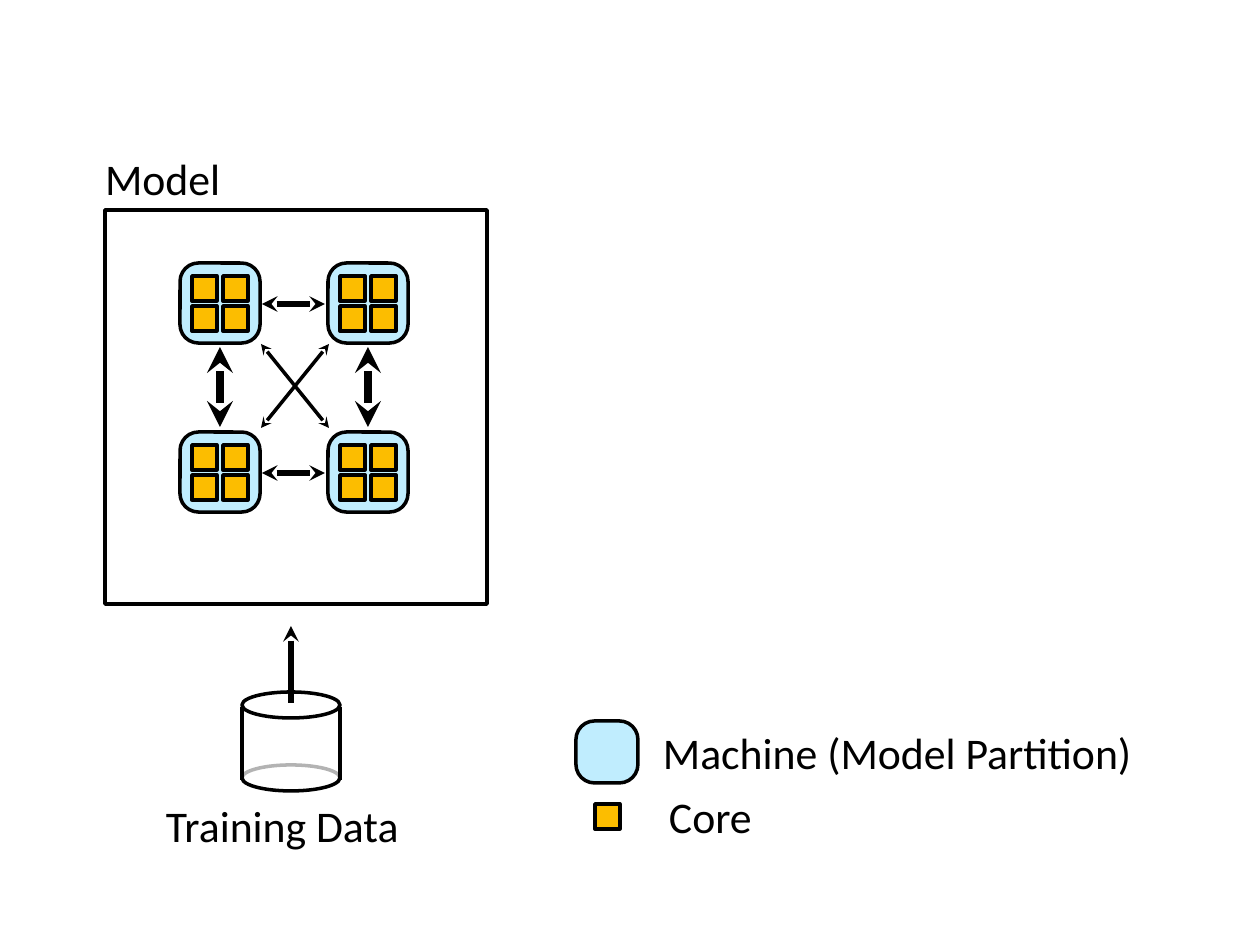
from lxml import etree
from pptx import Presentation
from pptx.dml.color import RGBColor
from pptx.enum.shapes import MSO_CONNECTOR, MSO_SHAPE
from pptx.enum.text import MSO_ANCHOR
from pptx.oxml.ns import qn
from pptx.util import Pt

RECT = MSO_SHAPE.RECTANGLE
ROUND = MSO_SHAPE.ROUNDED_RECTANGLE
OVAL = MSO_SHAPE.OVAL
LINE = MSO_CONNECTOR.STRAIGHT
MIDDLE = MSO_ANCHOR.MIDDLE

SCALE = 914400 / 126  # EMU per px


def px(n):
    return round(n * SCALE)


def color(code):
    return RGBColor.from_string(code)


class Board:
    font, size = "Calibri", 25
    ink, paper, blue, gold = "000000", "FFFFFF", "C0EDFE", "FCBD00"

    def __init__(self, slide):
        self.slide = slide

    def shape(self, kind, x, y, w, h, fill=None, line=2):
        item = self.slide.shapes.add_shape(kind, px(x), px(y), px(w), px(h))
        item.shadow.inherit = False
        if fill:
            item.fill.solid()
            item.fill.fore_color.rgb = color(fill)
        else:
            item.fill.background()
        if line:
            item.line.color.rgb = color(self.ink)
            item.line.width = Pt(line)
        else:
            item.line.fill.background()
        return item

    def machine(self, x, y, side, bend):
        item = self.shape(ROUND, x, y, side, side, self.blue)
        item.adjustments[0] = bend

    def core(self, x, y):
        self.shape(RECT, x, y, 25, 25, self.gold)

    def veil(self, x, y, w, h, alpha):
        item = self.shape(RECT, x, y, w, h, self.paper, line=0)
        tint = item.fill._xPr.find(qn("a:solidFill"))[0]
        etree.SubElement(tint, qn("a:alpha")).set("val", str(alpha * 1000))

    def line(self, x1, y1, x2, y2, width=2, ends=()):
        item = self.slide.shapes.add_connector(
            LINE, px(x1), px(y1), px(x2), px(y2))
        item.line.color.rgb = color(self.ink)
        item.line.width = Pt(width)
        props = item._element.spPr
        for end in ends:
            etree.SubElement(props.find(qn("a:ln")), qn(end)).set("type", "stealth")
        etree.SubElement(props, qn("a:effectLst"))

    def text(self, x, y, w, words):
        frame = self.slide.shapes.add_textbox(px(x), px(y), px(w), px(54)).text_frame
        frame.word_wrap = True
        frame.vertical_anchor = MIDDLE
        frame.margin_left = frame.margin_right = 0
        frame.margin_top = frame.margin_bottom = 0
        run = frame.paragraphs[0].add_run()
        run.text = words
        run.font.name = self.font
        run.font.size = Pt(self.size)
        run.font.color.rgb = color(self.ink)


def main():
    deck = Presentation()
    deck.slide_width, deck.slide_height = px(1260), px(945)
    board = Board(deck.slides.add_slide(deck.slide_layouts[6]))
    both = ("a:headEnd", "a:tailEnd")

    # Model frame
    board.text(105, 151, 122, "Model")
    board.shape(RECT, 105, 210, 382, 394)

    # Machines, each with a grid of cores
    cols, rows = (180, 328), (263, 432)
    for y in rows:
        for x in cols:
            board.machine(x, y, 80, 0.23)
            for dy in (13, 43):
                for dx in (12, 43):
                    board.core(x + dx, y + dy)

    # Links between machines
    for x in cols:
        board.line(x + 40, 347, x + 40, 427, 5, both)
    for y in rows:
        board.line(262, y + 41, 325, y + 41, 3, both)
    for x1, x2 in ((261, 329), (329, 261)):
        board.line(x1, 344, x2, 428, 2, both)

    # Training data drum, its far rim dimmed
    left, wide = 242, 98
    board.shape(OVAL, left, 765, wide, 26)
    board.veil(left, 708, wide, 70, 70)
    board.shape(OVAL, left, 692, wide, 26)
    for x in (left, left + wide):
        board.line(x, 707, x, 780)
    board.line(291, 626, 291, 703, 3, both[:1])
    board.text(166, 798, 267, "Training Data")

    # Legend
    board.machine(576, 721, 62, 0.3)
    board.text(663, 725, 509, "Machine (Model Partition)")
    board.core(595, 804)
    board.text(669, 789, 97, "Core")

    deck.save("out.pptx")


if __name__ == "__main__":
    main()
